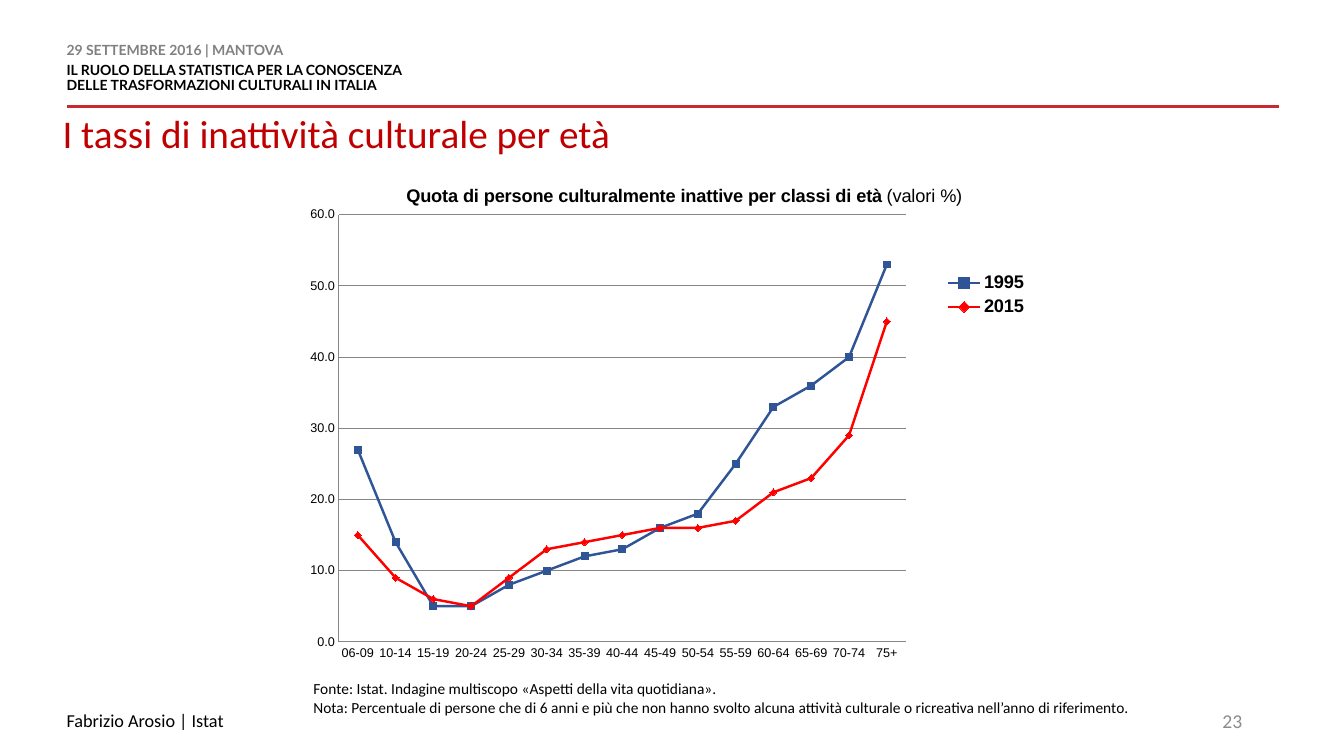
from dataclasses import dataclass

from lxml import etree
from pptx import Presentation
from pptx.chart.data import CategoryChartData
from pptx.dml.color import RGBColor
from pptx.enum.chart import XL_CHART_TYPE, XL_LEGEND_POSITION, XL_MARKER_STYLE, XL_TICK_MARK
from pptx.enum.shapes import MSO_CONNECTOR
from pptx.enum.text import MSO_ANCHOR, PP_ALIGN
from pptx.oxml.ns import qn
from pptx.util import Inches, Pt

LINES = XL_CHART_TYPE.LINE_MARKERS
RIGHT = XL_LEGEND_POSITION.RIGHT
SQUARE, DIAMOND = XL_MARKER_STYLE.SQUARE, XL_MARKER_STYLE.DIAMOND
NO_TICK = XL_TICK_MARK.NONE
STRAIGHT = MSO_CONNECTOR.STRAIGHT
TOP, MIDDLE = MSO_ANCHOR.TOP, MSO_ANCHOR.MIDDLE
LEFT, END = PP_ALIGN.LEFT, PP_ALIGN.RIGHT


@dataclass(frozen=True)
class Theme:
    black: str = "000000"
    gray: str = "808080"
    pale: str = "8C8C8C"
    grid: str = "868686"
    rule: str = "C72A31"
    title: str = "C00000"
    blue: str = "2F5597"
    red: str = "FF0000"
    head: str = "Lato"
    body: str = "Calibri"
    plot: str = "Arial"
    tick: int = 9
    small: int = 10
    note: int = 11
    text: int = 13
    page: int = 14
    large: int = 28


THEME = Theme()

AGES = [f"{low:02d}-{high:02d}" for low, high in
        [(6, 9)] + [(low, low + 4) for low in range(10, 75, 5)]] + ["75+"]
SERIES = [
    ("1995", [27, 14, 5, 5, 8, 10, 12, 13, 16, 18, 25, 33, 36, 40, 53], THEME.blue, SQUARE),
    ("2015", [15, 9, 6, 5, 9, 13, 14, 15, 16, 16, 17, 21, 23, 29, 45], THEME.red, DIAMOND),
]


def set_font(font, size, name, color=THEME.black, bold=False):
    font.size = Pt(size)
    font.name = name
    font.bold = bold
    font.color.rgb = RGBColor.from_string(color)


def add_text(slide, box, lines, size, color=THEME.black, name=THEME.body,
             bold=False, inset=True, anchor=TOP, align=LEFT, lead=None):
    frame = slide.shapes.add_textbox(*map(Inches, box)).text_frame
    frame.word_wrap = True
    frame.vertical_anchor = anchor
    if not inset:
        frame.margin_left = frame.margin_right = 0
        frame.margin_top = frame.margin_bottom = 0
    for i, line in enumerate(lines):
        para = frame.paragraphs[0] if i == 0 else frame.add_paragraph()
        para.text = line
        para.alignment = align
        if lead:
            para.line_spacing = lead
        set_font(para.font, size, name, color, bold)
    return frame


def add_rule(slide, left, right, y):
    rule = slide.shapes.add_connector(
        STRAIGHT, Inches(right), Inches(y), Inches(left), Inches(y))
    rule.line.color.rgb = RGBColor.from_string(THEME.rule)
    rule.line.width = Pt(2)
    etree.SubElement(rule.element.spPr, qn("a:effectLst"))


def place(part, index, inner=False, **sizes):
    """Give a chart part a fixed place, as shares of the chart."""
    for old in part.findall(qn("c:layout")):
        part.remove(old)
    layout = etree.Element(qn("c:layout"))
    manual = etree.SubElement(layout, qn("c:manualLayout"))
    rules = [("layoutTarget", "inner")] if inner else []
    rules += [("xMode", "edge"), ("yMode", "edge"), *sizes.items()]
    for tag, value in rules:
        etree.SubElement(manual, qn("c:" + tag)).set("val", str(value))
    part.insert(index, layout)


def style_axis(axis):
    axis.major_tick_mark = axis.minor_tick_mark = NO_TICK
    set_font(axis.tick_labels.font, THEME.tick, THEME.plot)
    style_line(axis.format.line, THEME.grid, 0.75)


def style_line(line, color, width):
    line.color.rgb = RGBColor.from_string(color)
    line.width = Pt(width)


def style_series(series, color, marker):
    series.smooth = False
    style_line(series.format.line, color, 1.75)
    series.marker.style = marker
    series.marker.size = 5
    series.marker.format.fill.solid()
    series.marker.format.fill.fore_color.rgb = RGBColor.from_string(color)
    style_line(series.marker.format.line, color, 0.75)


def add_lines(slide, box):
    data = CategoryChartData(number_format="0.0")
    data.categories = AGES
    for name, values, _, _ in SERIES:
        data.add_series(name, values)
    chart = slide.shapes.add_chart(LINES, *map(Inches, box), data).chart
    set_font(chart.font, THEME.small, THEME.body)

    # Title
    para = chart.chart_title.text_frame.paragraphs[0]
    for text, bold in [("Quota di persone culturalmente inattive per classi di età", True),
                       (" (valori %)", False)]:
        run = para.add_run()
        run.text = text
        set_font(run.font, THEME.text, THEME.plot, bold=bold)
    place(chart.chart_title._element, 1, x=0.15, y=0.04)

    # Legend
    chart.has_legend = True
    chart.legend.position = RIGHT
    chart.legend.include_in_layout = False
    set_font(chart.legend.font, THEME.text, THEME.plot, bold=True)
    place(chart.legend._element, 1, x=0.83, y=0.21, w=0.12, h=0.1)

    # Axes and series
    ages, rates = chart.category_axis, chart.value_axis
    style_axis(ages)
    style_axis(rates)
    rates.minimum_scale, rates.maximum_scale, rates.major_unit = 0, 60, 10
    rates.tick_labels.number_format = "0.0"
    rates.tick_labels.number_format_is_linked = False
    rates.has_major_gridlines = True
    style_line(rates.major_gridlines.format.line, THEME.grid, 0.75)
    plot = chart.plots[0]
    plot.vary_by_categories = False
    for series, (_, _, color, marker) in zip(plot.series, SERIES):
        style_series(series, color, marker)
    area = chart._chartSpace.chart.plotArea
    place(area, 0, inner=True, x=0.068, y=0.104, w=0.72, h=0.831)


def main():
    deck = Presentation()
    deck.slide_width, deck.slide_height = Inches(13.33), Inches(7.5)
    slide = deck.slides.add_slide(deck.slide_layouts[6])

    # Header
    add_rule(slide, 0.66, 12.69, 1.06)
    head = add_text(slide, (0.66, 0.43, 6.95, 0.66),
                    ["29 SETTEMBRE 2016 | MANTOVA",
                     "IL RUOLO DELLA STATISTICA PER LA CONOSCENZA",
                     "DELLE TRASFORMAZIONI CULTURALI IN ITALIA"],
                    THEME.small, name=THEME.head, bold=True, inset=False, lead=Pt(11))
    date = head.paragraphs[0]
    date.space_after = Pt(3)
    date.font.color.rgb = RGBColor.from_string(THEME.gray)
    add_text(slide, (0.62, 1.14, 6.59, 0.46), ["I tassi di inattività culturale per età"],
             THEME.large, THEME.title, inset=False, lead=0.9)

    # Chart and notes
    add_lines(slide, (2.83, 1.6, 7.81, 5.1))
    add_text(slide, (3.01, 6.69, 8.43, 0.47),
             ["Fonte: Istat. Indagine multiscopo «Aspetti della vita quotidiana».",
              "Nota: Percentuale di persone che di 6 anni e più che non hanno svolto alcuna "
              "attività culturale o ricreativa nell’anno di riferimento."], THEME.note)

    # Footer
    add_text(slide, (0.66, 6.95, 9.98, 0.4), ["Fabrizio Arosio | Istat"],
             THEME.text, inset=False, anchor=MIDDLE)
    add_text(slide, (9.42, 6.95, 3, 0.4), ["23"], THEME.page, THEME.pale,
             anchor=MIDDLE, align=END)
    deck.save("out.pptx")


if __name__ == "__main__":
    main()
